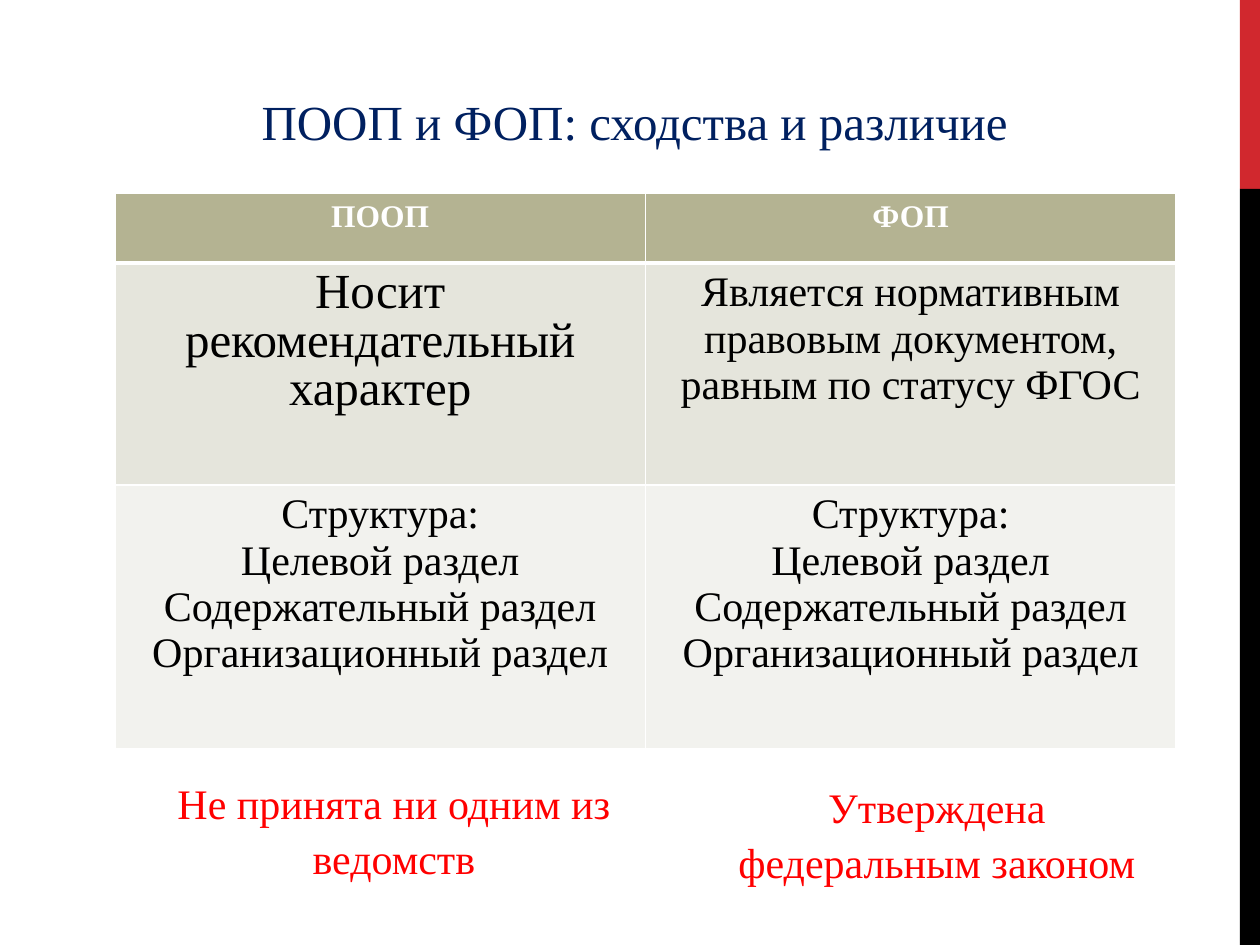
from dataclasses import dataclass

from lxml.etree import SubElement
from pptx import Presentation
from pptx.dml.color import RGBColor
from pptx.enum.shapes import MSO_SHAPE
from pptx.enum.text import PP_ALIGN
from pptx.oxml.ns import qn
from pptx.util import Emu, Pt

SCALE = 914400 // 126


@dataclass(frozen=True)
class Theme:
    """Colours, font and type sizes of the slide."""
    font: str = "Times New Roman"
    title: str = "002060"
    note: str = "FF0000"
    ink: str = "000000"
    white: str = "FFFFFF"
    accent: str = "D1282E"
    rows: tuple = ("B4B392", "E5E5DC", "F2F2EE")
    large: int = 28
    body: int = 24
    heading: int = 18


THEME = Theme()
STRUCTURE = "\n".join(["Структура:", "Целевой раздел", "Содержательный раздел", "Организационный раздел"])
COMPARISON = [
    ("ПООП", "ФОП"),
    ("Носит рекомендательный характер",
     "Является нормативным правовым документом, равным по статусу ФГОС"),
    (STRUCTURE, STRUCTURE),
]


def px(*lengths):
    """Turn pixel lengths into EMU."""
    return [Emu(length * SCALE) for length in lengths]


def write(frame, text, size, color, bold=False, spacing=None):
    """Fill a text frame with centred, styled paragraphs."""
    frame.text = text
    frame.word_wrap = True
    for paragraph in frame.paragraphs:
        paragraph.alignment = PP_ALIGN.CENTER
        paragraph.line_spacing = spacing
        for run in paragraph.runs:
            run.font.name = THEME.font
            run.font.size = Pt(size)
            run.font.bold = bold
            run.font.color.rgb = RGBColor.from_string(color)


def add_caption(slide, box, text, size, color):
    """Place a centred line of text in the box."""
    caption = slide.shapes.add_textbox(*px(*box))
    write(caption.text_frame, text, size, color, spacing=1.1)


def add_side_band(slide, box):
    """Draw the two-colour band, its top fifth in the accent colour."""
    left, top, width, height = box
    accent_height = height // 5
    parts = [(top, accent_height, THEME.accent),
             (top + accent_height, height - accent_height, THEME.ink)]
    for part_top, part_height, color in parts:
        band = slide.shapes.add_shape(
            MSO_SHAPE.RECTANGLE, *px(left, part_top, width, part_height))
        band.shadow.inherit = False
        band.fill.solid()
        band.fill.fore_color.rgb = RGBColor.from_string(color)
        band.line.fill.background()


def set_borders(cell, bottom, top):
    """Give a cell white borders with the given bottom and top widths."""
    properties = cell._tc.get_or_add_tcPr()
    widths = {"a:lnL": 1, "a:lnR": 1, "a:lnT": top, "a:lnB": bottom}
    for index, (side, width) in enumerate(widths.items()):
        border = properties.makeelement(qn(side), {"w": str(Pt(width))})
        fill = SubElement(border, qn("a:solidFill"))
        SubElement(fill, qn("a:srgbClr"), val=THEME.white)
        properties.insert(index, border)


def add_comparison(slide, box, row_heights):
    """Build the comparison table in the box."""
    table = slide.shapes.add_table(len(COMPARISON), 2, *px(*box)).table
    for row, height in zip(table.rows, px(*row_heights)):
        row.height = height
    for r, texts in enumerate(COMPARISON):
        for c, text in enumerate(texts):
            cell = table.cell(r, c)
            cell.fill.solid()
            cell.fill.fore_color.rgb = RGBColor.from_string(THEME.rows[r])
            set_borders(cell, bottom=3 if r == 0 else 1, top=3 if r == 1 else 1)
            if r == 0:
                write(cell.text_frame, text, THEME.heading, THEME.white, bold=True)
            else:
                write(cell.text_frame, text, THEME.body, THEME.ink)
    nature = table.cell(1, 0).text_frame
    write(nature, COMPARISON[1][0], THEME.large, THEME.ink, spacing=0.9)
    nature.paragraphs[0].space_before = Pt(6)


def main():
    """Compose the slide and save it."""
    deck = Presentation()
    deck.slide_width, deck.slide_height = px(1260, 945)
    slide = deck.slides.add_slide(deck.slide_layouts[6])
    add_side_band(slide, (1240, 0, 20, 945))
    add_caption(slide, (44, 79, 1181, 72), "ПООП и ФОП: сходства и различие",
                THEME.large, THEME.title)
    add_comparison(slide, (115, 193, 1061, 556), (70, 222, 264))
    add_caption(slide, (134, 766, 520, 115), "Не принята ни одним из ведомств",
                THEME.body, THEME.note)
    add_caption(slide, (709, 770, 456, 115), "Утверждена федеральным законом",
                THEME.body, THEME.note)
    deck.save("out.pptx")


if __name__ == "__main__":
    main()
